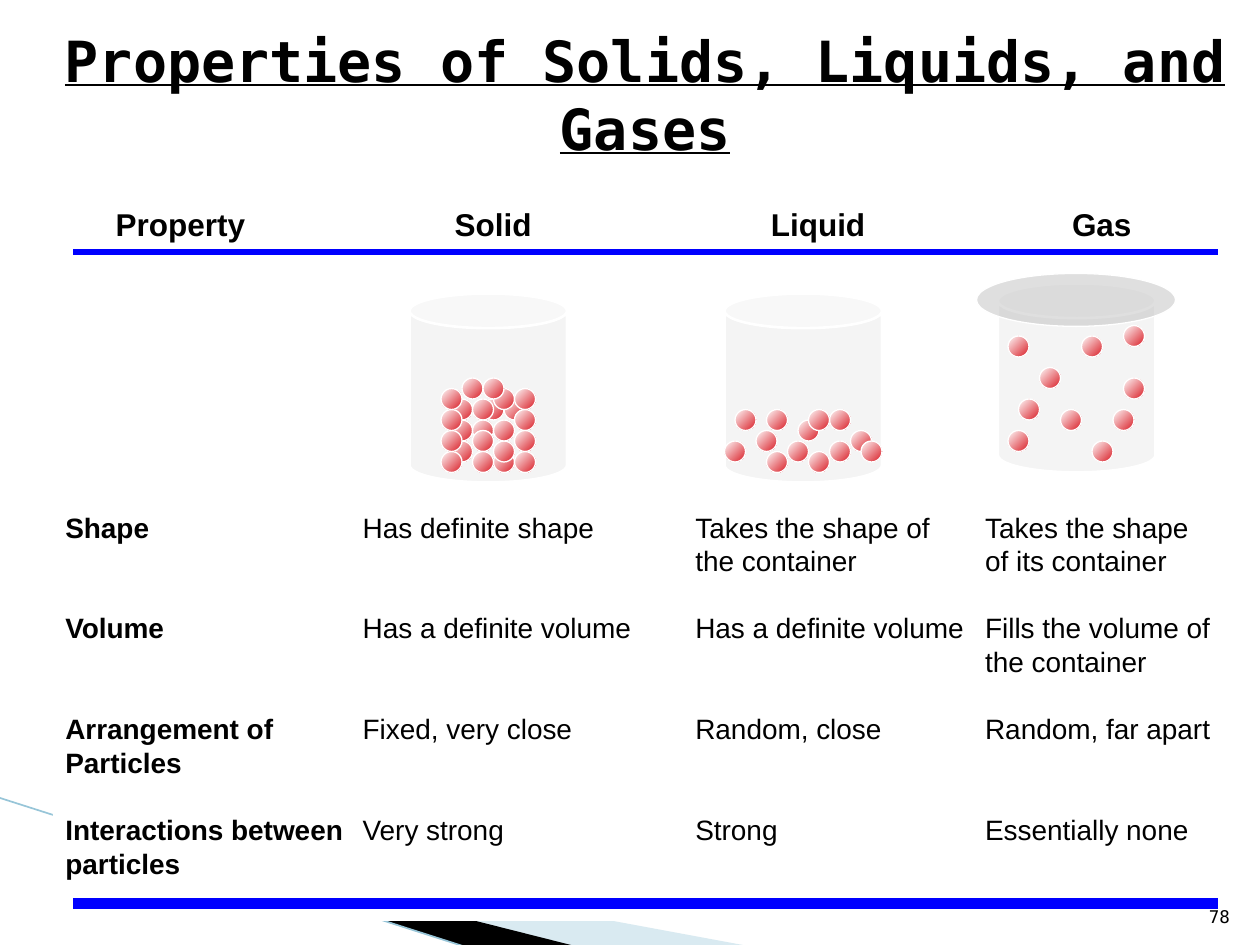
from lxml import etree
from pptx import Presentation
from pptx.dml.color import RGBColor
from pptx.enum.shapes import MSO_CONNECTOR, MSO_SHAPE
from pptx.enum.text import MSO_ANCHOR, PP_ALIGN
from pptx.oxml.ns import qn
from pptx.util import Inches, Pt

BLACK = RGBColor(0x00, 0x00, 0x00)
WHITE = RGBColor(0xFF, 0xFF, 0xFF)
BLUE = RGBColor(0x00, 0x00, 0xFF)
PALE_BLUE = RGBColor(0xA0, 0xCB, 0xDC)
EDGE_BLUE = RGBColor(0x97, 0xC5, 0xD8)
JAR_GRAY = RGBColor(0xEA, 0xEA, 0xEA)
LID_GRAY = RGBColor(0xC0, 0xC0, 0xC0)
RED = RGBColor(0xDA, 0x1F, 0x28)

CAN, OVAL, RECTANGLE = MSO_SHAPE.CAN, MSO_SHAPE.OVAL, MSO_SHAPE.RECTANGLE
STRAIGHT = MSO_CONNECTOR.STRAIGHT
BODY_FONT = "Arial"
MONO_FONT = "DejaVu Sans Mono"

presentation = Presentation()
presentation.slide_width = Inches(10)
presentation.slide_height = Inches(7.5)
slide = presentation.slides.add_slide(presentation.slide_layouts[5])
shapes = slide.shapes


def paint(shape, color, opacity=100, line_color=None, line_width=0.75):
    shape.shadow.inherit = False
    shape.fill.solid()
    shape.fill.fore_color.rgb = color
    if opacity < 100:
        color_element = shape.fill._xPr.find(".//" + qn("a:srgbClr"))
        etree.SubElement(color_element, qn("a:alpha"), val=str(opacity * 1000))
    if line_color is None:
        shape.line.fill.background()
    else:
        shape.line.color.rgb = line_color
        shape.line.width = Pt(line_width)


def add_tab_stops(paragraph, stops):
    tab_list = etree.SubElement(paragraph._p.get_or_add_pPr(), qn("a:tabLst"))
    for stop in stops:
        etree.SubElement(tab_list, qn("a:tab"), pos=str(Inches(stop)), algn="l")


# Corner wedges
wedges = [
    ([(0.55, 6.51), (5.95, 7.51), (4.56, 7.51), (0.55, 6.5)], PALE_BLUE, 40),
    ([(0.53, 6.49), (4.57, 7.51), (3.72, 7.52), (0.54, 6.5)], BLACK, 100),
]
for points, color, opacity in wedges:
    corners = [(Inches(x), Inches(y)) for x, y in points]
    builder = shapes.build_freeform(*corners[0], scale=1.0)
    builder.add_line_segments(corners[1:], close=True)
    paint(builder.convert_to_shape(), color, opacity)

# Answer panel, one paragraph per line with a tab stop per column
PANEL_LINES = [
    ("Shape", "\tHas definite shape\tTakes the shape of\tTakes the shape"),
    ("", "\t\tthe container\tof its container"),
    ("Volume", "\tHas a definite volume\tHas a definite volume\tFills the volume of"),
    ("", "\t\t\tthe container"),
    ("Arrangement of", "\tFixed, very close\tRandom, close\tRandom, far apart"),
    ("Particles", ""),
    ("Interactions between", "\tVery strong\tStrong\tEssentially none"),
    ("particles", ""),
]
LINE_HEIGHT = Pt(19.2)
panel = shapes.add_shape(RECTANGLE, Inches(0.42), Inches(4), Inches(9.31), Inches(3.31))
paint(panel, WHITE)
panel_frame = panel.text_frame
panel_frame.word_wrap = True
panel_frame.vertical_anchor = MSO_ANCHOR.TOP
panel_frame.margin_right = 0
for index, (label, answers) in enumerate(PANEL_LINES):
    paragraph = panel_frame.paragraphs[0] if index == 0 else panel_frame.add_paragraph()
    paragraph.alignment = PP_ALIGN.LEFT
    paragraph.line_spacing = LINE_HEIGHT
    if index and index % 2 == 0:
        paragraph.space_before = LINE_HEIGHT
    add_tab_stops(paragraph, [2.36, 5, 7.3])
    for text, bold in ((label, True), (answers, False)):
        if text:
            run = paragraph.add_run()
            run.text = text
            run.font.name = BODY_FONT
            run.font.size = Pt(16)
            run.font.bold = bold
            run.font.color.rgb = BLACK

# Corner edge and the two blue rules
rules = [
    (-0.01, 6.33, 3.71, 7.52, EDGE_BLUE, 0.95),
    (0.58, 2, 9.67, 2, BLUE, 3),
    (0.58, 7.17, 9.67, 7.17, BLUE, 6),
]
for x1, y1, x2, y2, color, width in rules:
    rule = shapes.add_connector(STRAIGHT, Inches(x1), Inches(y1), Inches(x2), Inches(y2))
    rule.line.color.rgb = color
    rule.line.width = Pt(width)
    etree.SubElement(rule._element.spPr, qn("a:effectLst"))
    if color == EDGE_BLUE:
        panel._element.addprevious(rule._element)

# Title
title = shapes.title
title.left, title.top = Inches(0.33), Inches(0.33)
title.width, title.height = Inches(9.58), Inches(0.83)
title.text_frame.text = "Properties of Solids, Liquids, and Gases"
title.text_frame.vertical_anchor = MSO_ANCHOR.MIDDLE
title_paragraph = title.text_frame.paragraphs[0]
title_paragraph.alignment = PP_ALIGN.CENTER
title_font = title_paragraph.runs[0].font
title_font.name = MONO_FONT
title_font.size = Pt(32.4)
title_font.bold = True
title_font.underline = True
title_font.color.rgb = BLACK

# Column headings
heading = shapes.add_textbox(Inches(0.82), Inches(1.58), Inches(8.27), Inches(0.4))
heading.text_frame.word_wrap = True
heading_paragraph = heading.text_frame.paragraphs[0]
heading_paragraph.text = "Property\tSolid\tLiquid\tGas"
add_tab_stops(heading_paragraph, [2.69, 5.2, 7.59])
heading_font = heading_paragraph.runs[0].font
heading_font.name = BODY_FONT
heading_font.size = Pt(18)
heading_font.bold = True
heading_font.color.rgb = BLACK

# Jars and the lid over the gas
for left, top in ((3.25, 2.33), (5.75, 2.33), (7.92, 2.25)):
    jar = shapes.add_shape(CAN, Inches(left), Inches(top), Inches(1.25), Inches(1.5))
    jar.adjustments[0] = 0.22
    paint(jar, JAR_GRAY, 50, WHITE, 1.5)
lid = shapes.add_shape(OVAL, Inches(7.75), Inches(2.17), Inches(1.58), Inches(0.42))
paint(lid, LID_GRAY, 50, WHITE)

# Particles, placed on a grid of twelfths of an inch (column, row)
GRID = Inches(1) / 12
solid = [
    (43, 42), (48, 38), (47, 43), (49, 43), (49, 39), (49, 41), (46, 38), (43, 38),
    (45, 38), (43, 40), (47, 42), (45, 40), (47, 40), (45, 41), (42, 43), (42, 41),
    (42, 39), (47, 37), (42, 37), (45, 43), (44, 36), (46, 36), (49, 37),
]
liquid = [
    (73, 43), (70, 39), (72, 41), (69, 42), (76, 40), (79, 39), (81, 41),
    (82, 42), (77, 39), (77, 43), (79, 42), (73, 39), (75, 42),
]
gas = [
    (96, 41), (97, 38), (104, 42), (96, 32), (103, 32),
    (99, 35), (107, 31), (107, 36), (101, 39), (106, 39),
]
for column, row in solid + liquid + gas:
    particle = shapes.add_shape(
        OVAL, int(column * GRID), int(row * GRID), int(2 * GRID), int(2 * GRID))
    particle.shadow.inherit = False
    particle.fill.gradient()
    particle.fill.gradient_angle = 315
    for stop, color, position in zip(particle.fill.gradient_stops, (WHITE, RED), (0, 1)):
        stop.color.rgb = color
        stop.position = position
    particle.line.color.rgb = WHITE
    particle.line.width = Pt(0.75)

# Page number
page_number = shapes.add_textbox(Inches(9.46), Inches(7.01), Inches(0.4), Inches(0.4))
page_number.text_frame.word_wrap = True
page_number.text_frame.vertical_anchor = MSO_ANCHOR.BOTTOM
page_paragraph = page_number.text_frame.paragraphs[0]
page_paragraph.text = "78"
page_paragraph.alignment = PP_ALIGN.RIGHT
page_font = page_paragraph.runs[0].font
page_font.name = MONO_FONT
page_font.size = Pt(10)
page_font.color.rgb = BLACK

presentation.save("out.pptx")
